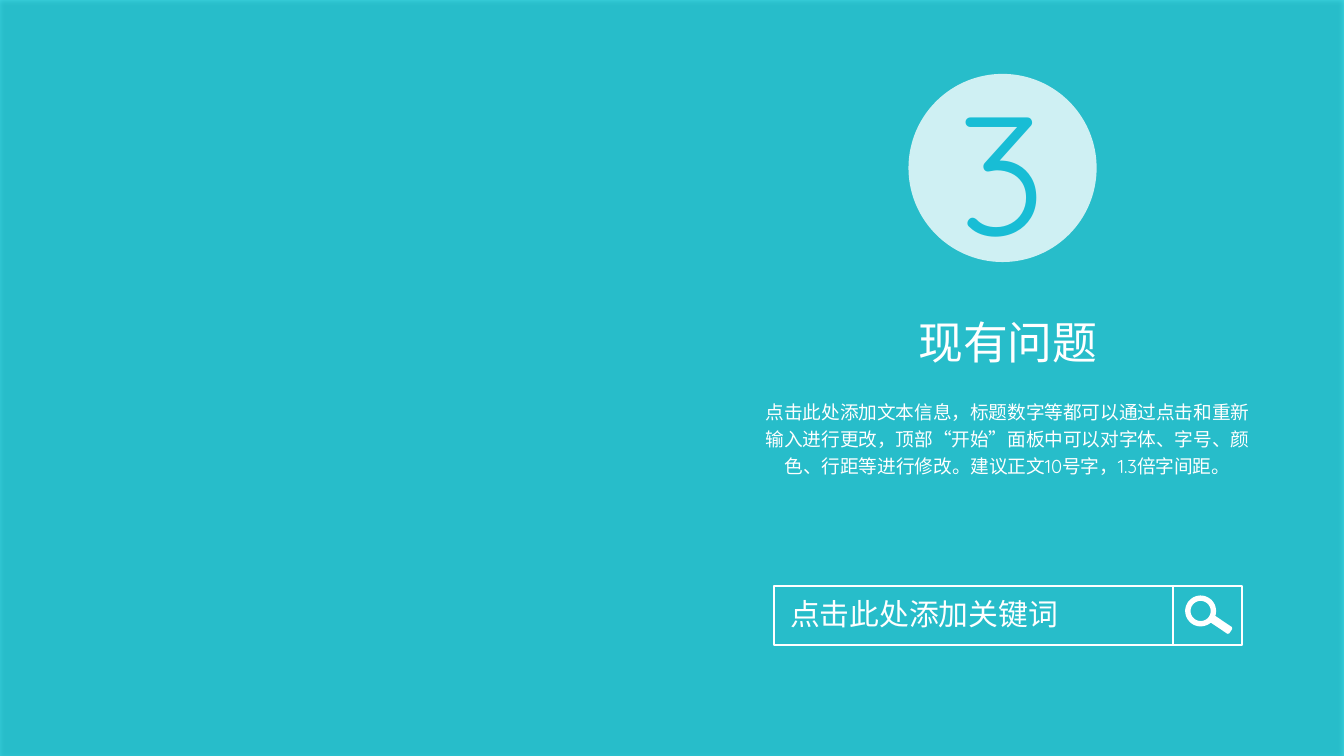
from math import asin, cos, pi, sin

from lxml.etree import SubElement
from pptx import Presentation
from pptx.dml.color import RGBColor
from pptx.enum.shapes import MSO_CONNECTOR, MSO_SHAPE
from pptx.enum.text import MSO_ANCHOR, MSO_AUTO_SIZE, PP_ALIGN
from pptx.oxml.ns import qn
from pptx.util import Inches, Pt

WIDTH = 10
HEIGHT = WIDTH * 9 / 16
COLORS = {"sea": "00C8D9", "number": "18BDD5", "white": "FFFFFF", "shadow": "000000"}
TITLE = {"name": "Roboto", "size": Pt(24)}
KEYWORD = {"name": "Roboto", "size": Pt(16)}
BODY = {"name": "Quicksand", "size": Pt(10)}
NUMBER = {"name": "Quicksand", "size": Pt(90)}
BODY_TEXT = (
    "点击此处添加文本信息，标题数字等都可以通过点击和重新输入进行更改，"
    "顶部“开始”面板中可以对字体、字号、颜色、行距等进行修改。"
    "建议正文10号字，1.3倍字间距。"
)


def rgb(name):
    return RGBColor.from_string(COLORS[name])


def box(*lengths):
    return [Inches(n) for n in lengths]


def write(sp, text, font, color="white", align=PP_ALIGN.LEFT, **frame):
    """Put one formatted paragraph in a shape."""
    tf = sp.text_frame
    settings = {"word_wrap": True, "auto_size": MSO_AUTO_SIZE.SHAPE_TO_FIT_TEXT, **frame}
    for key, value in settings.items():
        setattr(tf, key, value)
    p = tf.paragraphs[0]
    p.alignment = align
    r = p.add_run()
    r.text = text
    for key, value in {**font, "bold": False}.items():
        setattr(r.font, key, value)
    r.font.color.rgb = rgb(color)
    return p


def style(sp, fill=None, line=None):
    sp.shadow.inherit = False
    if fill:
        sp.fill.solid()
        sp.fill.fore_color.rgb = rgb(fill)
    else:
        sp.fill.background()
    if line:
        sp.line.color.rgb = rgb(line)
        sp.line.width = Pt(1)
    else:
        sp.line.fill.background()


def add_shape(shapes, kind, at, fill=None, alpha=100, line=None):
    sp = shapes.add_shape(kind, *box(*at))
    style(sp, fill, line)
    if alpha < 100:
        clr = sp.element.spPr.find(qn("a:solidFill"))[0]
        SubElement(clr, qn("a:alpha"), val=str(alpha * 1000))
    return sp


def add_shadow(sp):
    effects = sp.element.spPr.find(qn("a:effectLst"))
    shadow = SubElement(effects, qn("a:outerShdw"), blurRad=str(Pt(2)),
                        dist=str(Pt(1)), dir="5400000", rotWithShape="0")
    clr = SubElement(shadow, qn("a:srgbClr"), val=COLORS["shadow"])
    SubElement(clr, qn("a:alpha"), val="50000")


def add_divider(shapes, x, top, bottom):
    line = shapes.add_connector(MSO_CONNECTOR.STRAIGHT, *box(x, bottom, x, top))
    line.line.color.rgb = rgb("white")
    line.line.width = Pt(1)
    SubElement(line.element.spPr, qn("a:effectLst"))


def add_magnifier(shapes, cx, cy, outer=0.115, hole=0.075, half=0.03, end=9.19):
    """Draw a level magnifier, then tilt it."""
    def arc(radius, start, stop, steps=48):
        angles = [start + (stop - start) * i / steps for i in range(steps + 1)]
        return [box(cx + radius * cos(a), cy + radius * sin(a)) for a in angles]

    joint, bevel = asin(half / outer), 0.01
    # The rim ends at the upper edge of the handle
    handle = [box(end - bevel, cy - half), box(end, cy - half + bevel),
              box(end, cy + half - bevel), box(end - bevel, cy + half)]
    rim = arc(outer, joint, 2 * pi - joint) + handle
    lens = arc(hole, 2 * pi, 0)
    builder = shapes.build_freeform(*rim[0], scale=1.0)
    builder.add_line_segments(rim[1:], close=True)
    builder.move_to(*lens[0])
    builder.add_line_segments(lens[1:], close=True)
    sp = builder.convert_to_shape()
    style(sp, "white")
    sp.rotation = 33.9


def add_search_bar(s):
    shapes = s.shapes.add_group_shape().shapes
    left, top, width, height = 5.76, 4.36, 3.48, 0.44
    add_shape(shapes, MSO_SHAPE.RECTANGLE, (left, top, width, height), line="white")
    keyword = shapes.add_textbox(*box(5.78, 4.38, 2.39, 0.37))
    write(keyword, "点击此处添加关键词", KEYWORD)
    add_divider(shapes, 8.73, top, top + height)
    add_magnifier(shapes, 8.92, 4.59)


def main():
    prs = Presentation()
    prs.slide_width, prs.slide_height = box(WIDTH, HEIGHT)
    s = prs.slides.add_slide(prs.slide_layouts[5])

    # Background panel, sent behind the title
    panel = add_shape(s.shapes, MSO_SHAPE.RECTANGLE, (0, 0, WIDTH, HEIGHT), "sea", 75)
    add_shadow(panel)
    title = s.shapes.title
    title.element.addprevious(panel.element)

    # Section title
    title.left, title.top, title.width, title.height = box(6.72, 2.29, 1.56, 0.5)
    write(title, "现有问题", TITLE, align=PP_ALIGN.CENTER, word_wrap=False,
          vertical_anchor=MSO_ANCHOR.MIDDLE)

    # Search bar
    add_search_bar(s)

    # Description
    body = s.shapes.add_textbox(*box(5.55, 2.9, 3.89, 0.7))
    p = write(body, BODY_TEXT, BODY, align=PP_ALIGN.CENTER)
    p.line_spacing = 1.2

    # Section number
    badge = add_shape(s.shapes, MSO_SHAPE.OVAL, (6.76, 0.55, 1.4, 1.4), "white", 78)
    write(badge, "3", NUMBER, "number", PP_ALIGN.CENTER,
          auto_size=MSO_AUTO_SIZE.NONE, vertical_anchor=MSO_ANCHOR.MIDDLE)

    prs.save("out.pptx")


if __name__ == "__main__":
    main()
